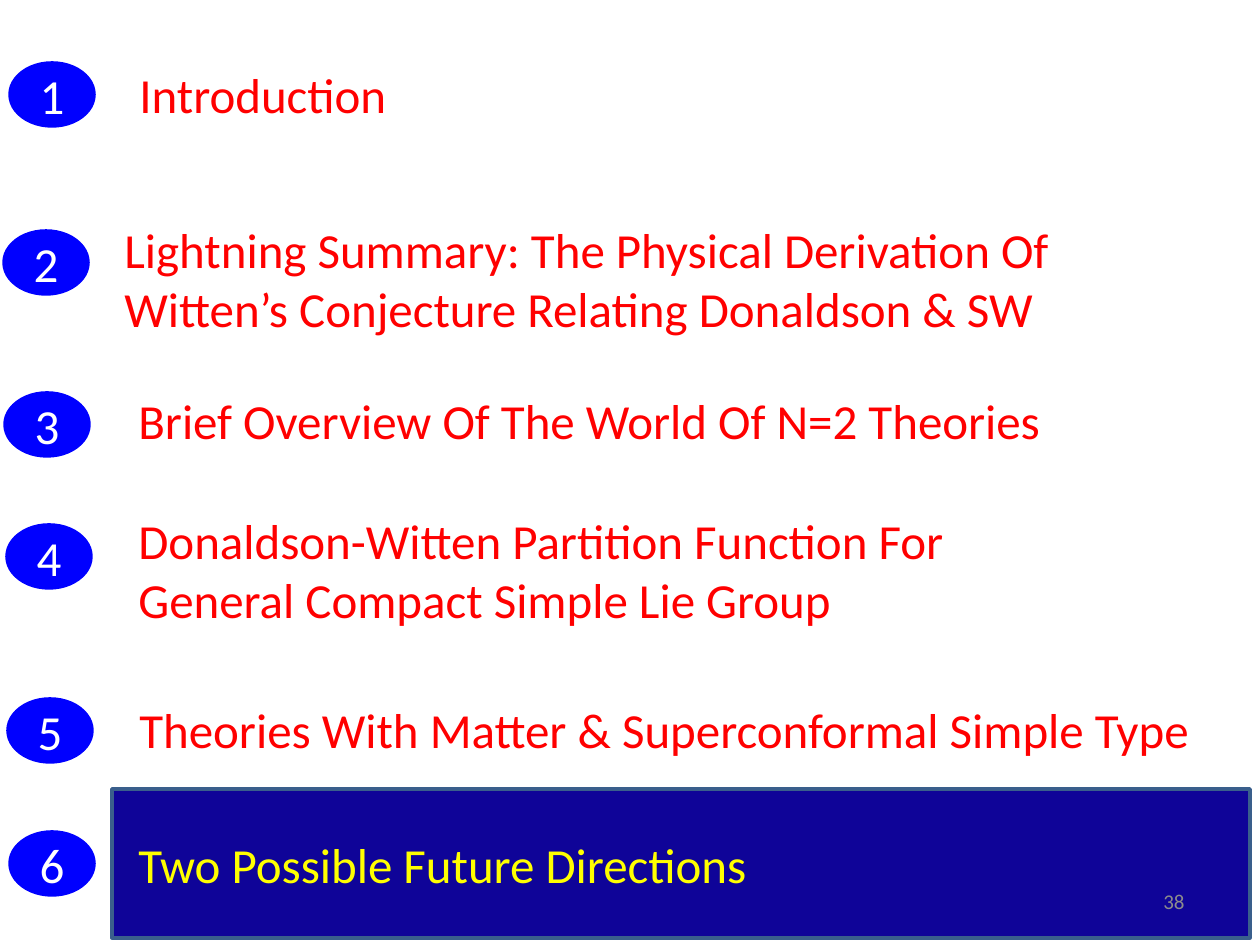
from pptx import Presentation
from pptx.dml.color import RGBColor
from pptx.enum.shapes import MSO_SHAPE as Shape
from pptx.enum.text import MSO_ANCHOR as Anchor, MSO_AUTO_SIZE as AutoSize, PP_ALIGN as Align
from pptx.util import Pt

EMU_PER_PX = 914400 / 126
FONT = "Calibri"
COLORS = {
    "badge": "0000FF",
    "number": "FFFFFF",
    "topic": "FF0000",
    "current": "FFFF00",
    "band": "0F0498",
    "band_line": "3A5F8C",
    "page": "8C8C8C",
}

# topic, badge (left, top), text box (left, top, width, height), wraps
AGENDA = [
    ("Introduction", (10, 63), (127, 58, 276, 72), False),
    ("Lightning Summary: The Physical Derivation Of Witten’s Conjecture Relating Donaldson & SW",
     (4, 231), (112, 213, 1040, 131), True),
    ("Brief Overview Of The World Of N=2 Theories", (5, 393), (126, 384, 1124, 72), True),
    ("Donaldson-Witten Partition Function For General Compact Simple Lie Group",
     (7, 525), (126, 504, 926, 131), True),
    ("Theories With Matter & Superconformal Simple Type", (8, 699), (127, 693, 1124, 72), True),
    ("Two Possible Future Directions", (10, 832), (126, 828, 1124, 72), True),
]
CURRENT = 6
BADGE_SIZE = (84, 63)
BAND = (112, 789, 1138, 149)
PAGE_NUMBER = ("38", (903, 876, 294, 50))


def px(*lengths):
    return [round(length * EMU_PER_PX) for length in lengths]


def color(name):
    return RGBColor.from_string(COLORS[name])


def add_filled(slide, kind, box, fill, line):
    shape = slide.shapes.add_shape(kind, *px(*box))
    shape.shadow.inherit = False
    shape.fill.solid()
    shape.fill.fore_color.rgb = color(fill)
    shape.line.color.rgb = color(line)
    shape.line.width = Pt(2)
    return shape


def write(shape, text, size, color_name, align=Align.LEFT, anchor=Anchor.TOP, wrap=True):
    frame = shape.text_frame
    frame.word_wrap = wrap
    frame.vertical_anchor = anchor
    paragraph = frame.paragraphs[0]
    paragraph.text = text
    paragraph.alignment = align
    paragraph.font.name = FONT
    paragraph.font.size = Pt(size)
    paragraph.font.color.rgb = color(color_name)


def main():
    presentation = Presentation()
    presentation.slide_width, presentation.slide_height = px(1260, 945)
    slide = presentation.slides.add_slide(presentation.slide_layouts[6])

    add_filled(slide, Shape.RECTANGLE, BAND, "band", "band_line")
    page, page_box = PAGE_NUMBER
    write(slide.shapes.add_textbox(*px(*page_box)), page, 12, "page", Align.RIGHT, Anchor.MIDDLE)

    for number, (topic, badge_place, text_box, wraps) in enumerate(AGENDA, 1):
        badge = add_filled(slide, Shape.OVAL, badge_place + BADGE_SIZE, "badge", "badge")
        write(badge, str(number), 28, "number", Align.CENTER, Anchor.MIDDLE)
        label = slide.shapes.add_textbox(*px(*text_box))
        write(label, topic, 28, "current" if number == CURRENT else "topic", wrap=wraps)
        label.text_frame.auto_size = AutoSize.SHAPE_TO_FIT_TEXT

    presentation.save("out.pptx")


if __name__ == "__main__":
    main()
